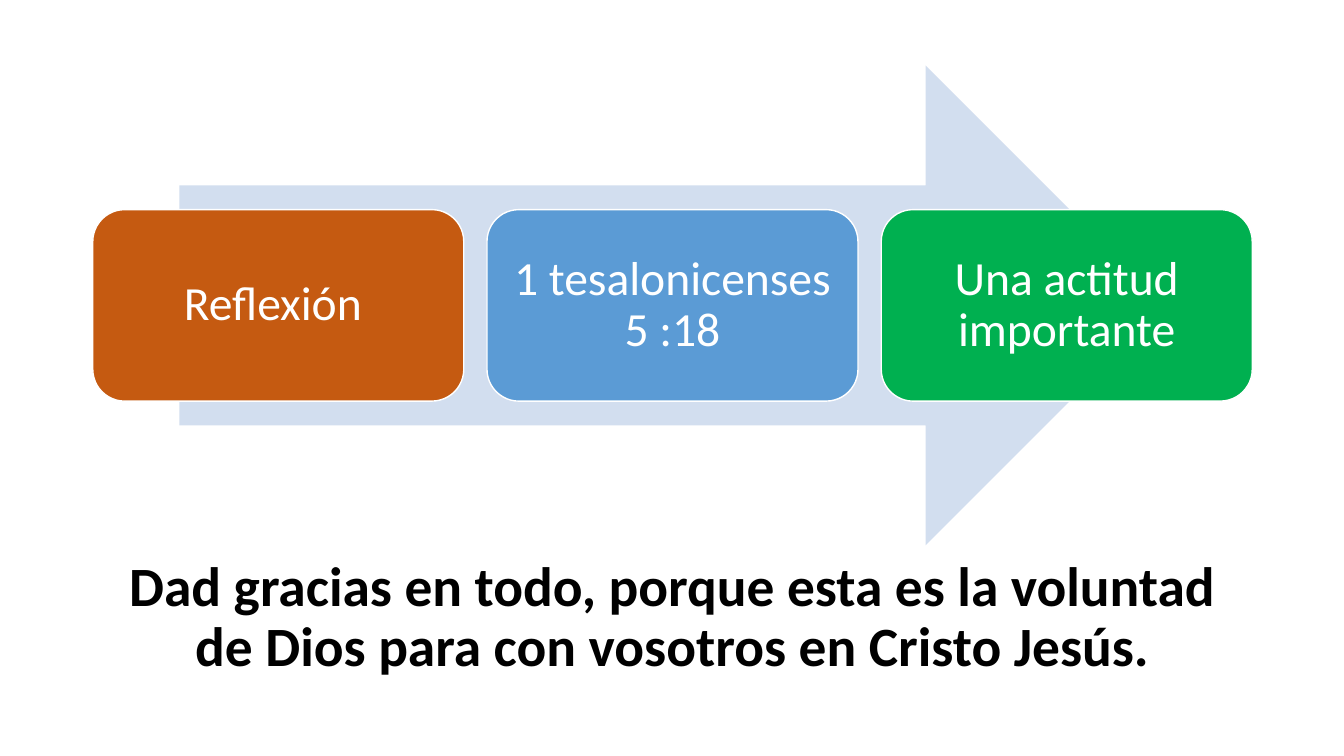
from dataclasses import dataclass

from pptx import Presentation
from pptx.dml.color import RGBColor
from pptx.enum.shapes import MSO_SHAPE
from pptx.enum.text import MSO_ANCHOR, MSO_AUTO_SIZE, PP_ALIGN
from pptx.util import Inches, Pt


@dataclass(frozen=True)
class Theme:
    font: str = "Calibri"
    verse_size: float = 39.6
    step_size: float = 34
    black: str = "000000"
    white: str = "FFFFFF"
    pale_blue: str = "D2DEEF"
    orange: str = "C55A11"
    blue: str = "5B9BD5"
    green: str = "00B050"


theme = Theme()


def write(frame, text, *, size, color, bold=False, inset=None):
    frame.word_wrap = True
    frame.auto_size = MSO_AUTO_SIZE.NONE
    frame.vertical_anchor = MSO_ANCHOR.MIDDLE
    if inset is not None:
        frame.margin_left = frame.margin_right = Inches(inset)
        frame.margin_top = frame.margin_bottom = Inches(inset)
    paragraph = frame.paragraphs[0]
    paragraph.alignment = PP_ALIGN.CENTER
    paragraph.line_spacing = 0.9
    run = paragraph.add_run()
    run.text = text
    run.font.name = theme.font
    run.font.size = Pt(size)
    run.font.bold = bold
    run.font.color.rgb = RGBColor.from_string(color)


prs = Presentation()
prs.slide_width, prs.slide_height = Inches(13.33), Inches(7.5)
slide = prs.slides.add_slide(prs.slide_layouts[5])

# Verse in the title placeholder
verse = slide.shapes.title
verse.left, verse.top = Inches(0.92), Inches(5.41)
verse.width, verse.height = Inches(11.5), Inches(1.45)
write(verse.text_frame,
      "Dad gracias en todo, porque esta es la voluntad de Dios para con vosotros en Cristo Jesús.",
      size=theme.verse_size, color=theme.black, bold=True)

# Arrow behind the steps
arrow = slide.shapes.add_shape(MSO_SHAPE.RIGHT_ARROW, Inches(1.78), Inches(0.65),
                               Inches(9.78), Inches(4.76))
arrow.shadow.inherit = False
arrow.fill.solid()
arrow.fill.fore_color.rgb = RGBColor.from_string(theme.pale_blue)
arrow.line.fill.background()

# Three evenly spaced steps
STEPS = [
    ("Reflexión ", theme.orange),
    ("1 tesalonicenses 5 :18", theme.blue),
    ("Una actitud importante", theme.green),
]
FIRST_LEFT, PITCH = 0.92, 3.91
for index, (label, color) in enumerate(STEPS):
    step = slide.shapes.add_shape(MSO_SHAPE.ROUNDED_RECTANGLE,
                                  Inches(FIRST_LEFT + index * PITCH), Inches(2.08),
                                  Inches(3.68), Inches(1.9))
    step.shadow.inherit = False
    step.fill.solid()
    step.fill.fore_color.rgb = RGBColor.from_string(color)
    step.line.color.rgb = RGBColor.from_string(theme.white)
    step.line.width = Pt(1)
    write(step.text_frame, label, size=theme.step_size, color=theme.white, inset=0.14)

prs.save("out.pptx")
